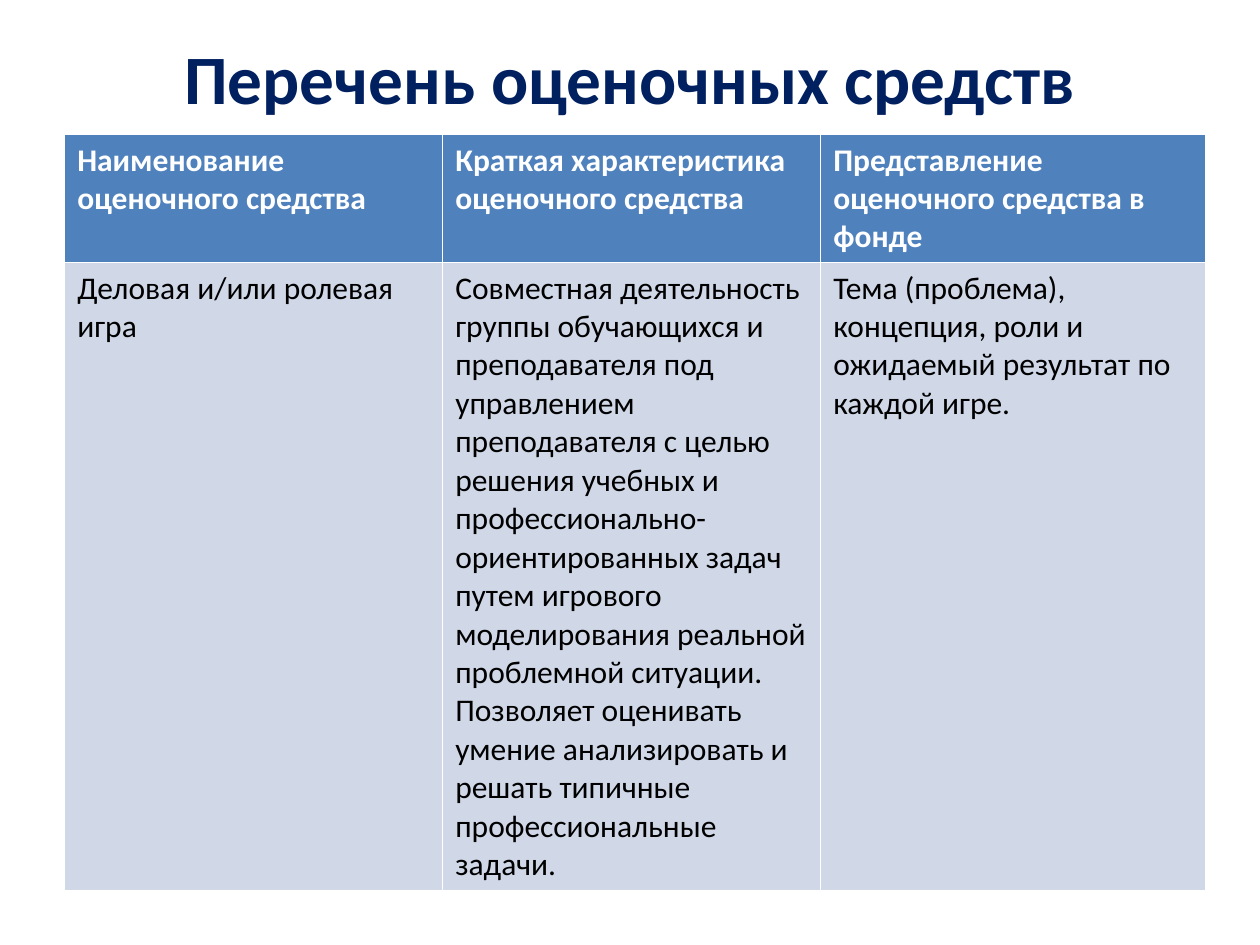
from pptx import Presentation
from pptx import util as u
from pptx.dml.color import RGBColor
from pptx.enum import text

TITLE = "Перечень оценочных средств"
ROWS = [
    (
        "Наименование \vоценочного средства",
        "Краткая характеристика оценочного средства",
        "Представление оценочного средства в фонде",
    ),
    (
        "Деловая и/или ролевая игра",
        "Совместная деятельность группы обучающихся и преподавателя "
        "под управлением преподавателя с целью решения учебных и "
        "профессионально-ориентированных задач путем игрового "
        "моделирования реальной проблемной ситуации. Позволяет оценивать "
        "умение анализировать и решать типичные профессиональные задачи.",
        "Тема (проблема), концепция, роли и ожидаемый результат "
        "по каждой игре.",
    ),
]
COLUMN_WIDTHS = [216, 216, 220]
ROW_HEIGHTS = [70, 355]
HEADER = {"fill": "4F81BD", "color": "FFFFFF", "bold": True}
BODY = {"fill": "D0D8E8", "color": "000000", "bold": False}


def rgb(value):
    return RGBColor.from_string(value)


def format_text(text_frame, color, **font_values):
    for paragraph in text_frame.paragraphs:
        for run in paragraph.runs:
            run.font.color.rgb = rgb(color)
            for name, value in font_values.items():
                setattr(run.font, name, value)


def place_title(slide):
    title = slide.shapes.title
    box = {"left": 36, "top": 21.6, "width": 648, "height": 44}
    for name, value in box.items():
        setattr(title, name, u.Pt(value))
    frame = title.text_frame
    frame.text = TITLE
    frame.vertical_anchor = text.MSO_ANCHOR.MIDDLE
    frame.paragraphs[0].alignment = text.PP_ALIGN.CENTER
    format_text(frame, "002060", name="Calibri", size=u.Pt(39.6), bold=True)


def fill_cell(cell, words, style):
    cell.fill.solid()
    cell.fill.fore_color.rgb = rgb(style["fill"])
    cell.text_frame.text = words
    format_text(cell.text_frame, style["color"], name="Calibri",
                size=u.Pt(18), bold=style["bold"])


def add_assessment_table(slide):
    frame = slide.shapes.add_table(
        len(ROW_HEIGHTS), len(COLUMN_WIDTHS), u.Pt(37), u.Pt(77),
        u.Pt(sum(COLUMN_WIDTHS)), u.Pt(sum(ROW_HEIGHTS)))
    table = frame.table
    for column, width in zip(table.columns, COLUMN_WIDTHS):
        column.width = u.Pt(width)
    for row, height, words, style in zip(
            table.rows, ROW_HEIGHTS, ROWS, (HEADER, BODY)):
        row.height = u.Pt(height)
        for cell, cell_words in zip(row.cells, words):
            fill_cell(cell, cell_words, style)


def main():
    presentation = Presentation()
    presentation.slide_width = u.Pt(720)
    presentation.slide_height = u.Pt(540)
    slide = presentation.slides.add_slide(presentation.slide_layouts[5])
    place_title(slide)
    add_assessment_table(slide)
    presentation.save("out.pptx")


if __name__ == "__main__":
    main()
